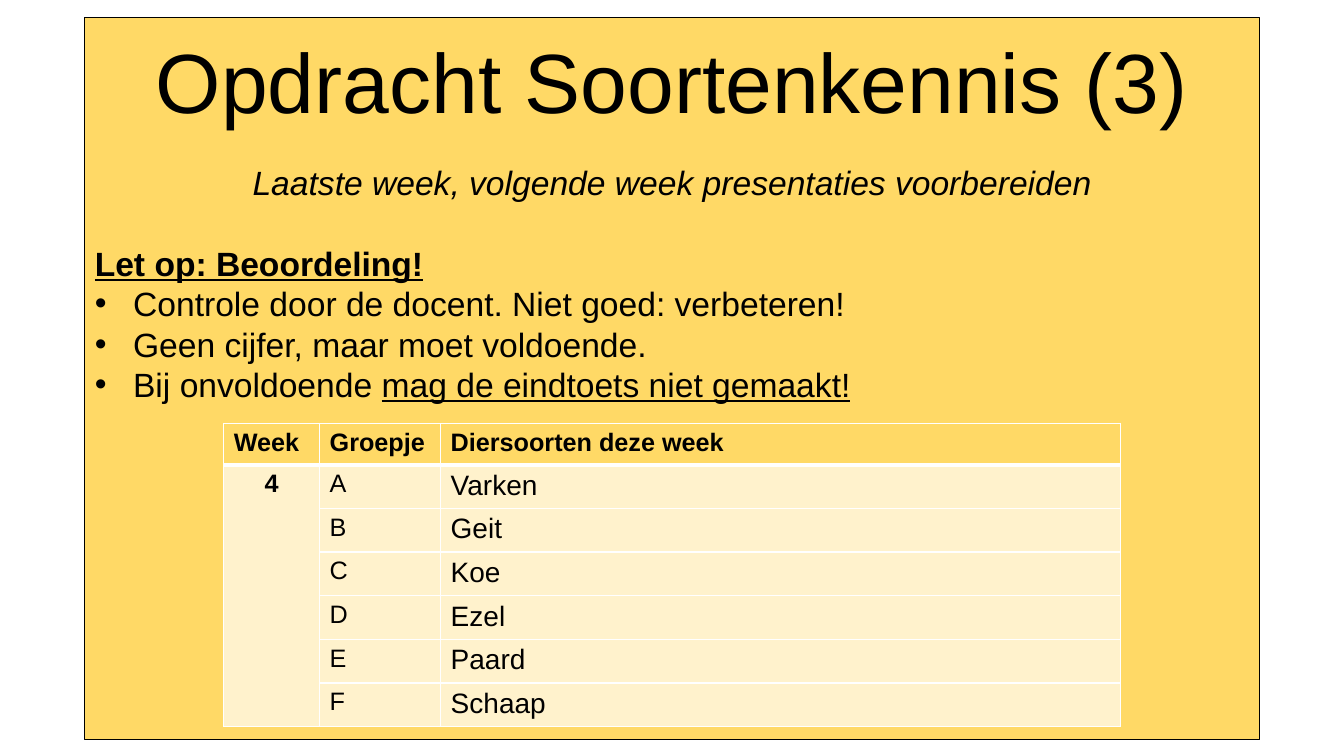
from pptx import Presentation
from pptx.dml.color import RGBColor
from pptx.enum.shapes import MSO_SHAPE
from pptx.enum.text import MSO_ANCHOR, MSO_AUTO_SIZE, PP_ALIGN
from pptx.oxml.ns import qn
from pptx.util import Inches, Pt
from lxml.etree import SubElement

TITLE = "Opdracht Soortenkennis (3)"
SUBTITLE = "Laatste week, volgende week presentaties voorbereiden"
WARNING = "Let op: Beoordeling!"
# Each rule is a list of (text, underlined)
RULES = [
    [("Controle door de docent. Niet goed: verbeteren!", False)],
    [("Geen cijfer, maar moet voldoende.", False)],
    [("Bij onvoldoende ", False), ("mag de eindtoets niet gemaakt!", True)],
]
HEADERS = ["Week", "Groepje", "Diersoorten deze week"]
WEEK = "4"
SPECIES = {"A": "Varken", "B": "Geit", "C": "Koe",
           "D": "Ezel", "E": "Paard", "F": "Schaap"}

COLORS = {"panel": "FFD966", "cell": "FFF2CC", "ink": "000000", "rule": "FFFFFF"}
FONT = "Arial"
PANEL = (0.84, 0.17, 11.65, 7.17)
TITLE_HEIGHT = 1.05
BODY_TOP, BODY_HEIGHT = 1.56, 2.5
LINE_PITCH = Pt(28.8)
INDENT = Inches(0.38)
TABLE_LEFT, TABLE_TOP, TABLE_HEIGHT = 2.22, 4.2, 3.01
COLUMNS = [0.95, 1.2, 6.74]
HEADER_HEIGHT = 0.41


def rgb(name):
    return RGBColor.from_string(COLORS[name])


def add_run(paragraph, text, size, bold=False, italic=False, underline=False):
    run = paragraph.add_run()
    run.text = text
    font = run.font
    font.name, font.size = FONT, Pt(size)
    font.bold, font.italic, font.underline = bold, italic, underline
    font.color.rgb = rgb("ink")


def place(shape, left, top, width, height):
    shape.left, shape.top = Inches(left), Inches(top)
    shape.width, shape.height = Inches(width), Inches(height)
    frame = shape.text_frame
    frame.word_wrap = True
    frame.auto_size = MSO_AUTO_SIZE.NONE
    frame.vertical_anchor = MSO_ANCHOR.TOP
    return frame


def format_line(paragraph, bulleted=False, align=PP_ALIGN.LEFT, after=0):
    props = paragraph._p.get_or_add_pPr()
    props.set("marL", str(INDENT if bulleted else 0))
    props.set("indent", str(-INDENT if bulleted else 0))
    if bulleted:
        SubElement(props, qn("a:buFont"), typeface=FONT)
        SubElement(props, qn("a:buChar"), char="•")
    else:
        SubElement(props, qn("a:buNone"))
    paragraph.alignment = align
    paragraph.line_spacing = LINE_PITCH
    paragraph.space_before, paragraph.space_after = Pt(0), after


def style_cell(cell, fill, top=1, bottom=1):
    """Draw the four borders, widths in points, then fill the cell."""
    props = cell._tc.get_or_add_tcPr()
    for side, width in zip("LRTB", (1, 1, top, bottom)):
        line = SubElement(props, qn(f"a:ln{side}"), w=str(Pt(width)))
        SubElement(SubElement(line, qn("a:solidFill")), qn("a:srgbClr"),
                   val=COLORS["rule"])
    cell.fill.solid()
    cell.fill.fore_color.rgb = rgb(fill)


def add_panel(slide):
    panel = slide.shapes.add_shape(MSO_SHAPE.RECTANGLE, *map(Inches, PANEL))
    panel.shadow.inherit = False
    panel.fill.solid()
    panel.fill.fore_color.rgb = rgb("panel")
    panel.line.color.rgb = rgb("ink")
    panel.line.width = Pt(0.75)
    slide.shapes.title.element.addprevious(panel.element)


def fill_text(slide):
    left, top, width, _ = PANEL
    heading = place(slide.shapes.title, left, top + 0.07, width, TITLE_HEIGHT)
    heading.paragraphs[0].alignment = PP_ALIGN.CENTER
    add_run(heading.paragraphs[0], TITLE, 60)

    body = place(slide.placeholders[1], left, BODY_TOP, width, BODY_HEIGHT)
    subtitle = body.paragraphs[0]
    format_line(subtitle, align=PP_ALIGN.CENTER, after=LINE_PITCH)
    add_run(subtitle, SUBTITLE, 24, italic=True)
    warning = body.add_paragraph()
    format_line(warning)
    add_run(warning, WARNING, 24, bold=True, underline=True)
    for rule in RULES:
        bullet = body.add_paragraph()
        format_line(bullet, bulleted=True)
        for text, underlined in rule:
            add_run(bullet, text, 24, underline=underlined)


def add_species_table(slide):
    count = len(SPECIES)
    table = slide.shapes.add_table(
        count + 1, len(COLUMNS), Inches(TABLE_LEFT), Inches(TABLE_TOP),
        Inches(sum(COLUMNS)), Inches(TABLE_HEIGHT)).table
    table.first_row = table.horz_banding = False
    for column, width in zip(table.columns, COLUMNS):
        column.width = Inches(width)
    for index, row in enumerate(table.rows):
        row.height = Inches((TABLE_HEIGHT - HEADER_HEIGHT) / count
                            if index else HEADER_HEIGHT)
        for cell in row.cells:
            style_cell(cell, "cell" if index else "panel",
                       top=3 if index == 1 else 1, bottom=1 if index else 3)

    for column, header in enumerate(HEADERS):
        add_run(table.cell(0, column).text_frame.paragraphs[0], header, 18, bold=True)
    table.cell(1, 0).merge(table.cell(count, 0))
    week = table.cell(1, 0).text_frame.paragraphs[0]
    week.alignment = PP_ALIGN.CENTER
    add_run(week, WEEK, 18, bold=True)
    for row, (group, animal) in enumerate(SPECIES.items(), start=1):
        add_run(table.cell(row, 1).text_frame.paragraphs[0], group, 18)
        add_run(table.cell(row, 2).text_frame.paragraphs[0], animal, 20)


def main():
    deck = Presentation()
    deck.slide_width, deck.slide_height = Inches(13.33), Inches(7.5)
    slide = deck.slides.add_slide(deck.slide_layouts[1])
    add_panel(slide)
    fill_text(slide)
    add_species_table(slide)
    deck.save("out.pptx")


if __name__ == "__main__":
    main()
